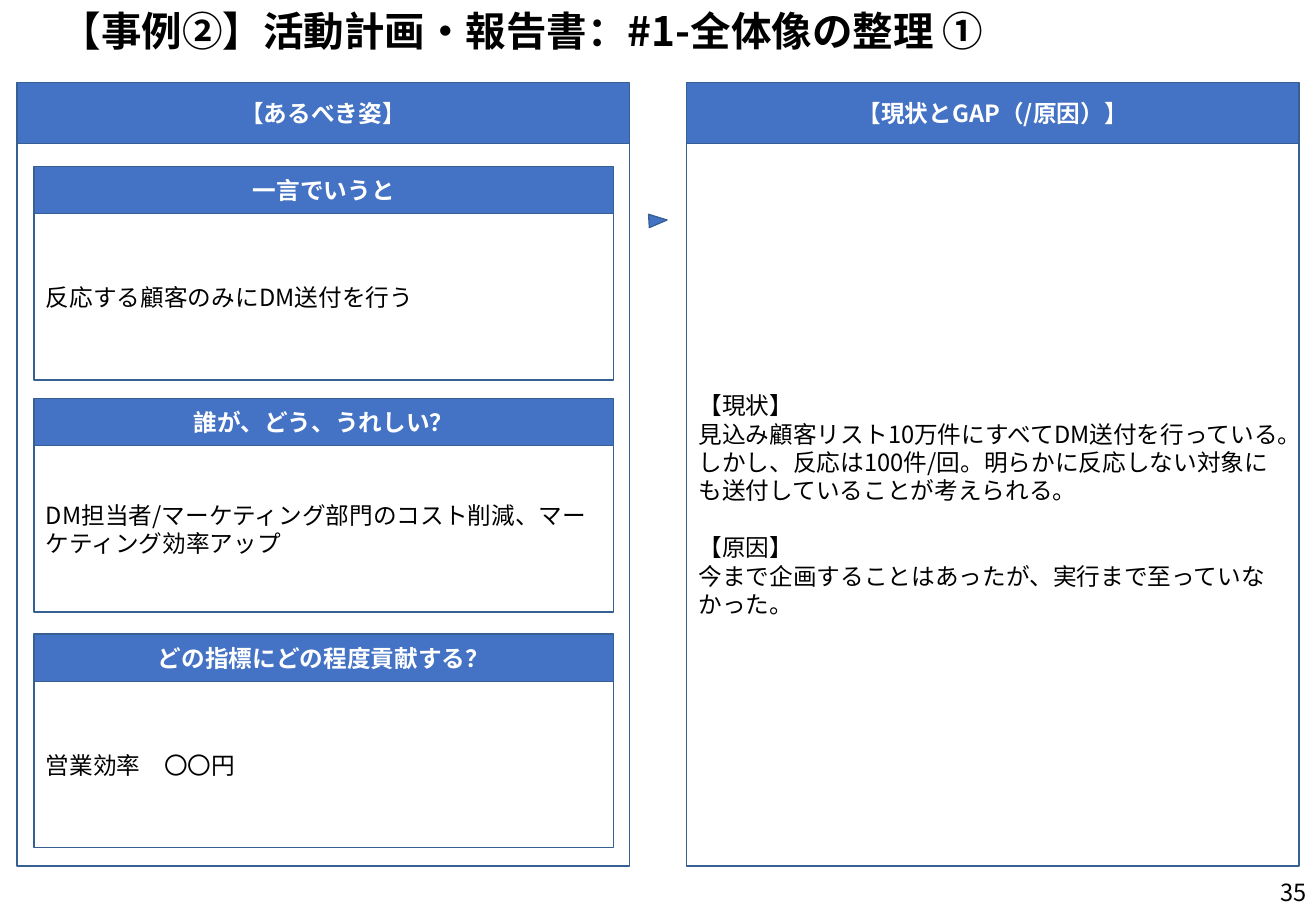
from dataclasses import dataclass

from lxml.etree import SubElement
from pptx import Presentation
from pptx.dml.color import RGBColor
from pptx.enum.shapes import MSO_SHAPE
from pptx.enum.text import MSO_ANCHOR, PP_ALIGN
from pptx.oxml.ns import qn
from pptx.shapes.autoshape import Shape
from pptx.slide import Slide
from pptx.util import Emu, Pt

PX = 9144  # EMU per px, 100 px to the inch
FONT = "Noto Sans CJK JP"
COLORS = {"blue": "4472C4", "edge": "376092", "white": "FFFFFF", "black": "000000"}


@dataclass(frozen=True)
class Box:
    left: int
    top: int
    width: int
    height: int

    def emu(self) -> list[Emu]:
        return [Emu(v * PX) for v in (self.left, self.top, self.width, self.height)]


@dataclass(frozen=True)
class Panel:
    """A blue heading above a white body."""
    left: int
    top: int
    width: int
    head_height: int
    body_height: int
    heading: str
    body: tuple[str, ...] = ()


PANELS = [
    Panel(565, 68, 504, 50, 595, "【現状とGAP（/原因）】", (
        "【現状】\v見込み顧客リスト10万件にすべてDM送付を行っている。"
        "しかし、反応は100件/回。明らかに反応しない対象にも送付していることが考えられる。",
        "【原因】\v今まで企画することはあったが、実行まで至っていなかった。")),
    Panel(14, 68, 504, 50, 595, "【あるべき姿】"),
    Panel(28, 137, 477, 39, 137, "一言でいうと", ("反応する顧客のみにDM送付を行う",)),
    Panel(28, 328, 477, 39, 137, "誰が、どう、うれしい？",
          ("DM担当者/マーケティング部門のコスト削減、マーケティング効率アップ",)),
    Panel(28, 522, 477, 39, 137, "どの指標にどの程度貢献する？", ("営業効率　〇〇円",)),
]


def rgb(name: str) -> RGBColor:
    return RGBColor.from_string(COLORS[name])


def write(s: Shape, texts: tuple[str, ...], color: str = "black", size: int = 14,
          bold: bool = False, align: PP_ALIGN = PP_ALIGN.LEFT) -> None:
    tf = s.text_frame
    tf.word_wrap = True
    tf.vertical_anchor = MSO_ANCHOR.MIDDLE
    for i, text in enumerate(texts):
        p = tf.add_paragraph() if i else tf.paragraphs[0]
        p.text = text
        p.alignment = align
        p.line_spacing = Pt(size * 1.2)
        if i:
            p.space_before = Pt(size * 1.2)
        p.font.name = FONT
        p.font.size = Pt(size)
        p.font.bold = bold
        p.font.color.rgb = rgb(color)
        # East Asian typeface
        latin = p._p.pPr.find(qn("a:defRPr")).find(qn("a:latin"))
        ea = SubElement(latin.getparent(), qn("a:ea"), typeface=FONT)
        latin.addnext(ea)


def add_shape(slide: Slide, kind: MSO_SHAPE, box: Box, fill: str) -> Shape:
    s = slide.shapes.add_shape(kind, *box.emu())
    s.shadow.inherit = False
    s.fill.solid()
    s.fill.fore_color.rgb = rgb(fill)
    s.line.color.rgb = rgb("edge")
    s.line.width = Pt(0.75)
    return s


def add_panel(slide: Slide, panel: Panel) -> None:
    head = Box(panel.left, panel.top, panel.width, panel.head_height)
    body = Box(panel.left, panel.top + panel.head_height, panel.width, panel.body_height)
    s = add_shape(slide, MSO_SHAPE.RECTANGLE, head, "blue")
    write(s, (panel.heading,), "white", bold=True, align=PP_ALIGN.CENTER)
    s = add_shape(slide, MSO_SHAPE.RECTANGLE, body, "white")
    write(s, panel.body)


def main() -> None:
    prs = Presentation()
    prs.slide_width, prs.slide_height = Emu(1083 * PX), Emu(750 * PX)
    slide = prs.slides.add_slide(prs.slide_layouts[6])

    # Title and page number
    title = slide.shapes.add_textbox(*Box(50, 0, 1027, 50).emu())
    title.text_frame.margin_left = 0
    write(title, ("【事例②】活動計画・報告書：#1-全体像の整理 ①",), size=24, bold=True)
    number = slide.shapes.add_textbox(*Box(832, 714, 253, 40).emu())
    write(number, ("35",), align=PP_ALIGN.RIGHT)

    # Panels
    for panel in PANELS:
        add_panel(slide, panel)

    # Arrow between the two large panels
    arrow = add_shape(slide, MSO_SHAPE.ISOSCELES_TRIANGLE, Box(536, 174, 11, 15), "blue")
    arrow.rotation = 87

    prs.save("out.pptx")


if __name__ == "__main__":
    main()
